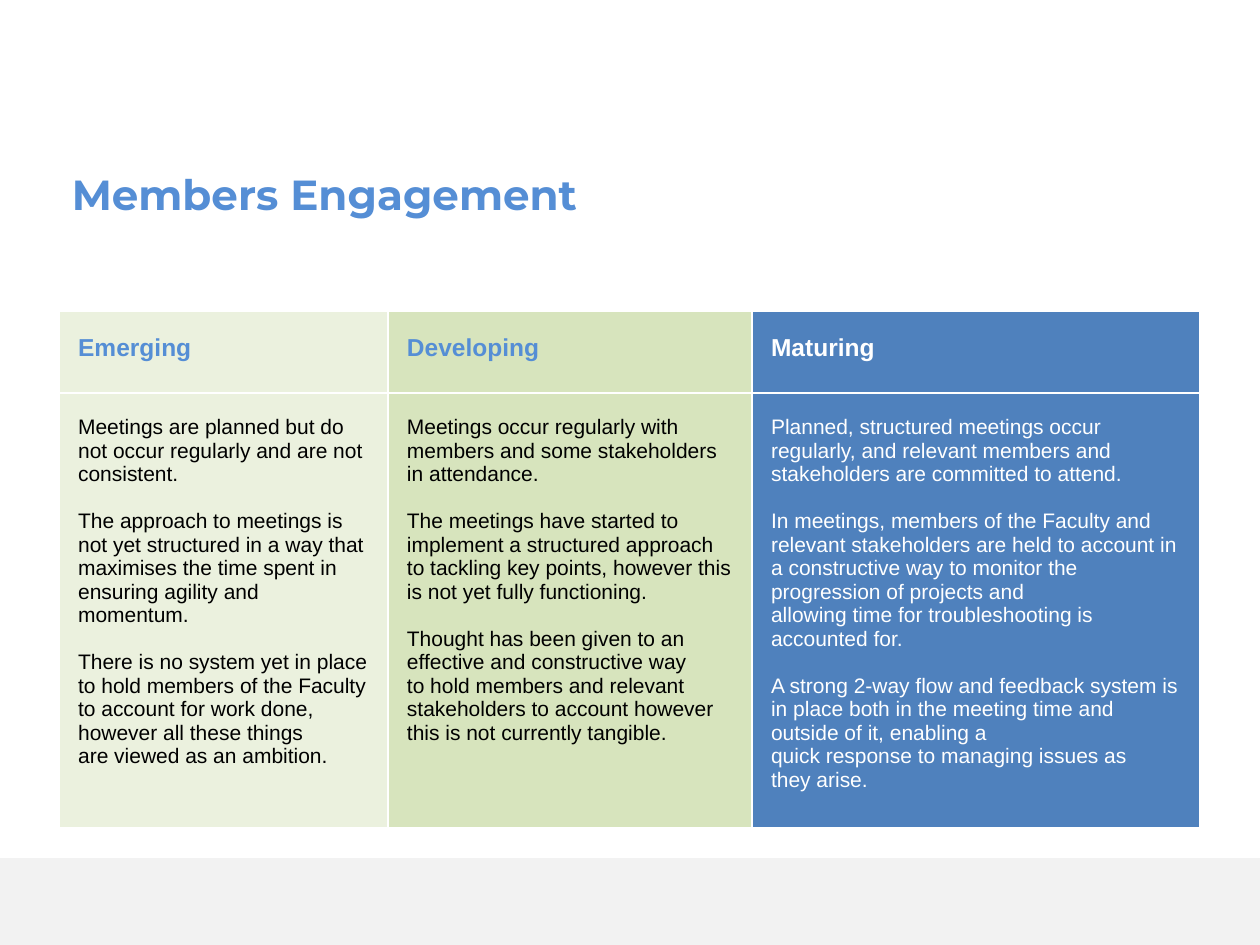
import pptx
import pptx.util
import pptx.dml.color
import pptx.enum.shapes
import pptx.enum.text
import pptx.oxml
import pptx.oxml.ns
from pptx.util import Inches

BLUE_TEXT = "558ED5"
WHITE = "FFFFFF"
BLACK = "000000"
COLUMN_WIDTHS = [2.61, 2.89, 3.55]
ROW_HEIGHTS = [0.65, 3.45]

# Heading, fill, heading colour, body colour, statements
STAGES = [
    ("Emerging", "EBF1DE", BLUE_TEXT, BLACK, [
        "Meetings are planned but do not occur regularly and are not consistent.",
        "The approach to meetings is not yet structured in a way that maximises "
        "the time spent in ensuring agility and momentum.",
        "There is no system yet in place to hold members of the Faculty to account "
        "for work done, however all these things\nare viewed as an ambition.",
    ]),
    ("Developing", "D7E4BD", BLUE_TEXT, BLACK, [
        "Meetings occur regularly with members and some stakeholders in attendance.",
        "The meetings have started to implement a structured approach to tackling "
        "key points, however this is not yet fully functioning.",
        "Thought has been given to an effective and constructive way\n"
        "to hold members and relevant stakeholders to account however this is not "
        "currently tangible.",
    ]),
    ("Maturing", "4F81BD", WHITE, WHITE, [
        "Planned, structured meetings occur regularly, and relevant members and "
        "stakeholders are committed to attend.",
        "In meetings, members of the Faculty and relevant stakeholders are held to "
        "account in a constructive way to monitor the progression of projects and\n"
        "allowing time for troubleshooting is accounted for.",
        "A strong 2-way flow and feedback system is in place both in the meeting "
        "time and outside of it, enabling a\n"
        "quick response to managing issues as\nthey arise.",
    ]),
]


def color(hex_code):
    return pptx.dml.color.RGBColor.from_string(hex_code)


def add_text(paragraph, text, font, size, hex_code, bold=False):
    """Add one run per line, with line breaks between them."""
    for number, line in enumerate(text.split("\n")):
        if number:
            paragraph.add_line_break()
        run = paragraph.add_run()
        run.text = line
        run.font.name = font
        run.font.size = pptx.util.Pt(size)
        run.font.bold = bold
        run.font.color.rgb = color(hex_code)


def add_footer_band(slide):
    band = slide.shapes.add_shape(pptx.enum.shapes.MSO_SHAPE.RECTANGLE,
                                  0, Inches(6.81), Inches(10), Inches(0.69))
    band.shadow.inherit = False
    band.fill.solid()
    band.fill.fore_color.rgb = color("F2F2F2")
    band.line.fill.background()


def set_title(slide, text):
    title = slide.shapes.title
    title.left, title.top = Inches(0.47), Inches(1.29)
    title.width, title.height = Inches(4.31), Inches(0.5)
    title.text_frame.word_wrap = True
    title.text_frame.auto_size = pptx.enum.text.MSO_AUTO_SIZE.NONE
    title.text_frame.vertical_anchor = pptx.enum.text.MSO_ANCHOR.MIDDLE
    paragraph = title.text_frame.paragraphs[0]
    paragraph.alignment = pptx.enum.text.PP_ALIGN.LEFT
    add_text(paragraph, text, "Montserrat", 24, BLUE_TEXT, bold=True)


def set_borders(cell, hex_code, points):
    properties = cell._tc.get_or_add_tcPr()
    for position, side in enumerate(("lnL", "lnR", "lnT", "lnB")):
        border = pptx.oxml.parse_xml(
            f'<a:{side} {pptx.oxml.ns.nsdecls("a")} w="{pptx.util.Pt(points)}">'
            f'<a:solidFill><a:srgbClr val="{hex_code}"/></a:solidFill></a:{side}>')
        properties.insert(position, border)


def fill_cell(cell, statements, fill, size, hex_code, bold=False):
    cell.margin_left = cell.margin_right = Inches(0.15)
    cell.margin_top, cell.margin_bottom = Inches(0.18), Inches(0.04)
    cell.fill.solid()
    cell.fill.fore_color.rgb = color(fill)
    set_borders(cell, WHITE, 1)
    for number, statement in enumerate(statements):
        if number:
            paragraph = cell.text_frame.add_paragraph()
            paragraph.space_before = pptx.util.Pt(13.4)
        else:
            paragraph = cell.text_frame.paragraphs[0]
        add_text(paragraph, statement, "Arial", size, hex_code, bold)


def add_stage_table(slide):
    table = slide.shapes.add_table(
        len(ROW_HEIGHTS), len(STAGES), Inches(0.47), Inches(2.47),
        Inches(sum(COLUMN_WIDTHS)), Inches(sum(ROW_HEIGHTS))).table
    for row, height in zip(table.rows, ROW_HEIGHTS):
        row.height = Inches(height)
    for index, (heading, fill, heading_color, body_color, statements) in enumerate(STAGES):
        table.columns[index].width = Inches(COLUMN_WIDTHS[index])
        fill_cell(table.cell(0, index), [heading], fill, 14, heading_color, bold=True)
        fill_cell(table.cell(1, index), statements, fill, 12, body_color)


def main():
    deck = pptx.Presentation()
    deck.slide_width, deck.slide_height = Inches(10), Inches(7.5)
    slide = deck.slides.add_slide(deck.slide_layouts[5])
    add_footer_band(slide)
    add_stage_table(slide)
    set_title(slide, "Members Engagement")
    deck.save("out.pptx")


if __name__ == "__main__":
    main()
